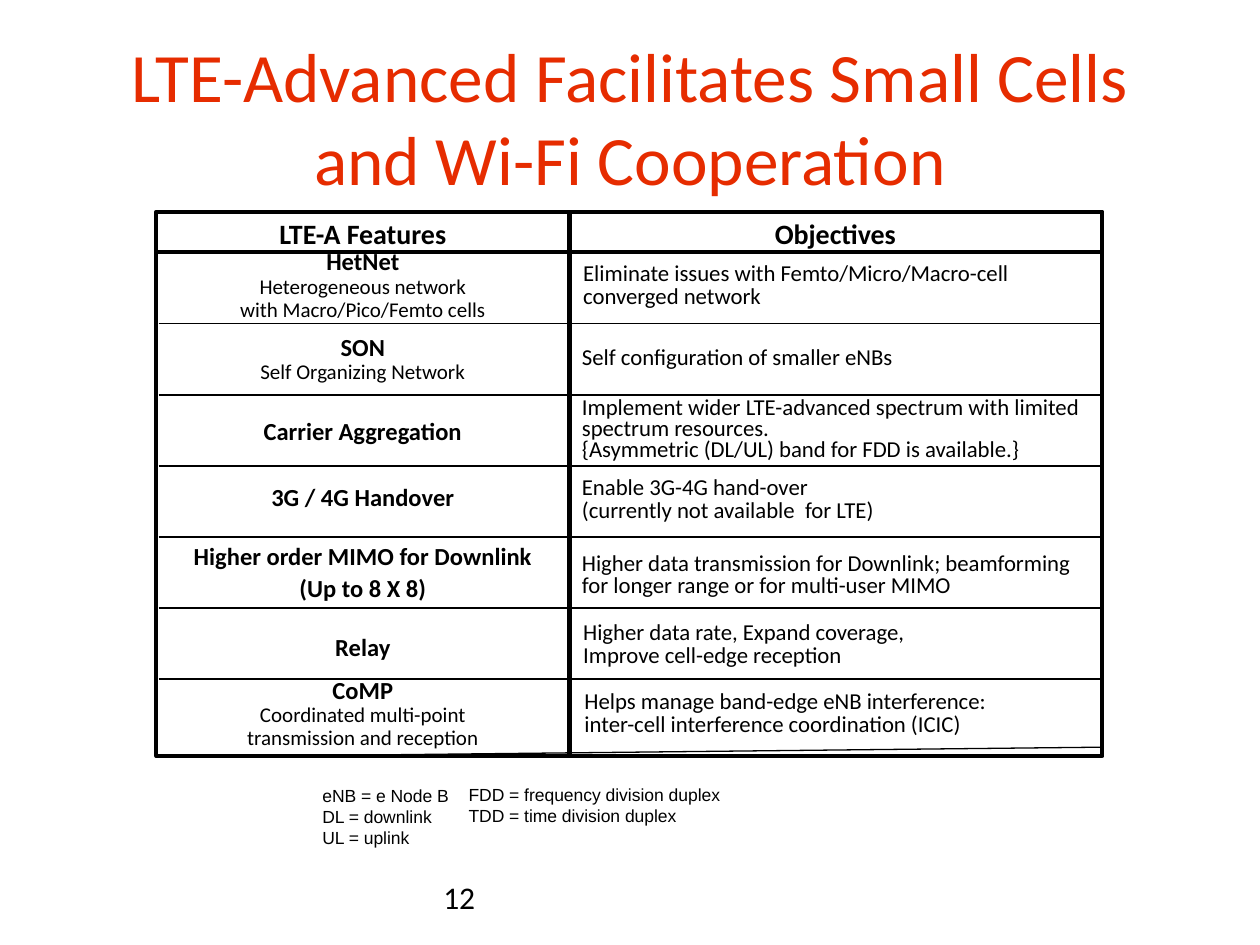
from lxml.etree import SubElement
from pptx import Presentation
from pptx.dml.color import RGBColor
from pptx.enum.shapes import MSO_CONNECTOR, MSO_SHAPE
from pptx.enum.text import MSO_ANCHOR, MSO_AUTO_SIZE, PP_ALIGN
from pptx.oxml.ns import qn
from pptx.util import Inches, Pt

BLACK = RGBColor(0x00, 0x00, 0x00)
RED = RGBColor(0xE6, 0x2C, 0x00)
TIGHT, SNUG, LOOSE = Pt(12), Pt(13), 1.1
LEFT, MID, RIGHT = 1.25, 4.52, 8.75


class Page:
    """Holds the slide and its text style."""

    def __init__(self, slide, font="Calibri", color=BLACK):
        self.slide, self.font, self.color = slide, font, color

    def text(self, box, lines, align=PP_ALIGN.LEFT, font=None, color=None,
             wrap=True, grow=True, anchor=MSO_ANCHOR.TOP):
        """Each line is (words, size, bold, line spacing)."""
        shape = self.slide.shapes.add_textbox(*map(Inches, box))
        frame = shape.text_frame
        frame.word_wrap = wrap
        frame.vertical_anchor = anchor
        frame.auto_size = (MSO_AUTO_SIZE.SHAPE_TO_FIT_TEXT if grow
                           else MSO_AUTO_SIZE.NONE)
        for i, (words, size, bold, space) in enumerate(lines):
            para = frame.add_paragraph() if i else frame.paragraphs[0]
            para.alignment = align
            para.line_spacing = space
            run = para.add_run()
            run.text = words
            run.font.name = font or self.font
            run.font.size = Pt(size)
            run.font.bold = bold
            run.font.color.rgb = color or self.color

    def line(self, x1, y1, x2, y2, width=0.75):
        line = self.slide.shapes.add_connector(
            MSO_CONNECTOR.STRAIGHT, *map(Inches, (x1, y1, x2, y2)))
        line.line.color.rgb = self.color
        line.line.width = Pt(width)
        SubElement(line._element.spPr, qn("a:effectLst"))

    def frame(self, box, width):
        rect = self.slide.shapes.add_shape(
            MSO_SHAPE.RECTANGLE, *map(Inches, box))
        rect.shadow.inherit = False
        rect.fill.background()
        rect.line.color.rgb = self.color
        rect.line.width = Pt(width)


def head(words, size=14, space=LOOSE):
    return words, size, True, space


def plain(words, size, space=SNUG):
    return [(word, size, False, space) for word in words]


# Top and height of the feature text, its lines,
# then left, top and height of the goal text and its lines
ROWS = [
    (1.64, 0.4, [head("LTE-A Features", 16)],
     MID, 1.64, 0.4, [head("Objectives", 16)]),
    (1.96, 0.65, [head("HetNet", space=SNUG)]
     + plain(["Heterogeneous network", "with Macro/Pico/Femto cells"], 12),
     4.53, 2.04, 0.47,
     plain(["Eliminate issues with Femto/Micro/Macro-cell",
            "converged network"], 13)),
    (2.56, 0.54, [head("SON")] + plain(["Self Organizing Network"], 12),
     MID, 2.71, 0.29, plain(["Self configuration of smaller eNBs"], 13)),
    (3.23, 0.36, [head("Carrier Aggregation")],
     MID, 3.12, 0.61,
     plain(["Implement wider LTE-advanced spectrum with limited "
            "spectrum resources.",
            "{Asymmetric (DL/UL) band for FDD is available.}"], 13, TIGHT)),
    (3.83, 0.29, [head("3G / 4G Handover", space=SNUG)],
     MID, 3.74, 0.47,
     plain(["Enable 3G-4G hand-over",
            "(currently not available  for LTE)"], 13)),
    (4.22, 0.62,
     [head("Higher order MIMO for Downlink"), head("(Up to 8 X 8)")],
     MID, 4.34, 0.47,
     plain(["Higher data transmission for Downlink; beamforming "
            "for longer range or for multi-user MIMO"], 13)),
    (4.94, 0.36, [head("Relay")],
     4.53, 4.89, 0.47,
     plain(["Higher data rate, Expand coverage,",
            "Improve cell-edge reception"], 13)),
    (5.36, 0.65, [head("CoMP", space=SNUG)]
     + plain(["Coordinated multi-point", "transmission and reception"], 12),
     4.54, 5.44, 0.47,
     plain(["Helps manage band-edge eNB interference:",
            "inter-cell interference coordination (ICIC)"], 13)),
]


def main():
    deck = Presentation()
    deck.slide_width, deck.slide_height = Inches(10), Inches(7.5)
    page = Page(deck.slides.add_slide(deck.slide_layouts[6]))

    page.text((0.5, 0.3, 9, 1.25),
              plain(["LTE-Advanced Facilitates Small Cells "
                     "and Wi-Fi Cooperation"], 39.6, 1.0),
              PP_ALIGN.CENTER, color=RED, grow=False,
              anchor=MSO_ANCHOR.MIDDLE)

    page.frame((1.24, 1.68, 7.51, 4.32), 2.25)
    page.line(LEFT, 2, RIGHT, 2, 2.5)
    page.line(MID, 1.67, MID, 6.01, 2.5)
    for i in range(6):
        y = 2.57 + i * (5.39 - 2.57) / 5
        page.line(1.26, y, RIGHT, y)
    page.line(LEFT, 6.01, RIGHT, 5.93)

    for i, (top, high, name, x, y, tall, goal) in enumerate(ROWS):
        page.text((LEFT, top, 3.26, high), name, PP_ALIGN.CENTER)
        page.text((x, y, 4.22, tall), goal,
                  PP_ALIGN.LEFT if i else PP_ALIGN.CENTER)

    page.text((2.46, 6.18, 1.21, 0.61),
              plain(["eNB = e Node B", "DL = downlink", "UL = uplink"],
                    10, 1.0), font="Arial", wrap=False)
    page.text((3.62, 6.17, 2.22, 0.44),
              plain(["FDD = frequency division duplex",
                     "TDD = time division duplex"], 10, 1.0),
              font="Arial", wrap=False)
    page.text((3.42, 6.92, 2.33, 0.4), plain(["12"], 18, 1.0), grow=False)
    deck.save("out.pptx")


if __name__ == "__main__":
    main()
